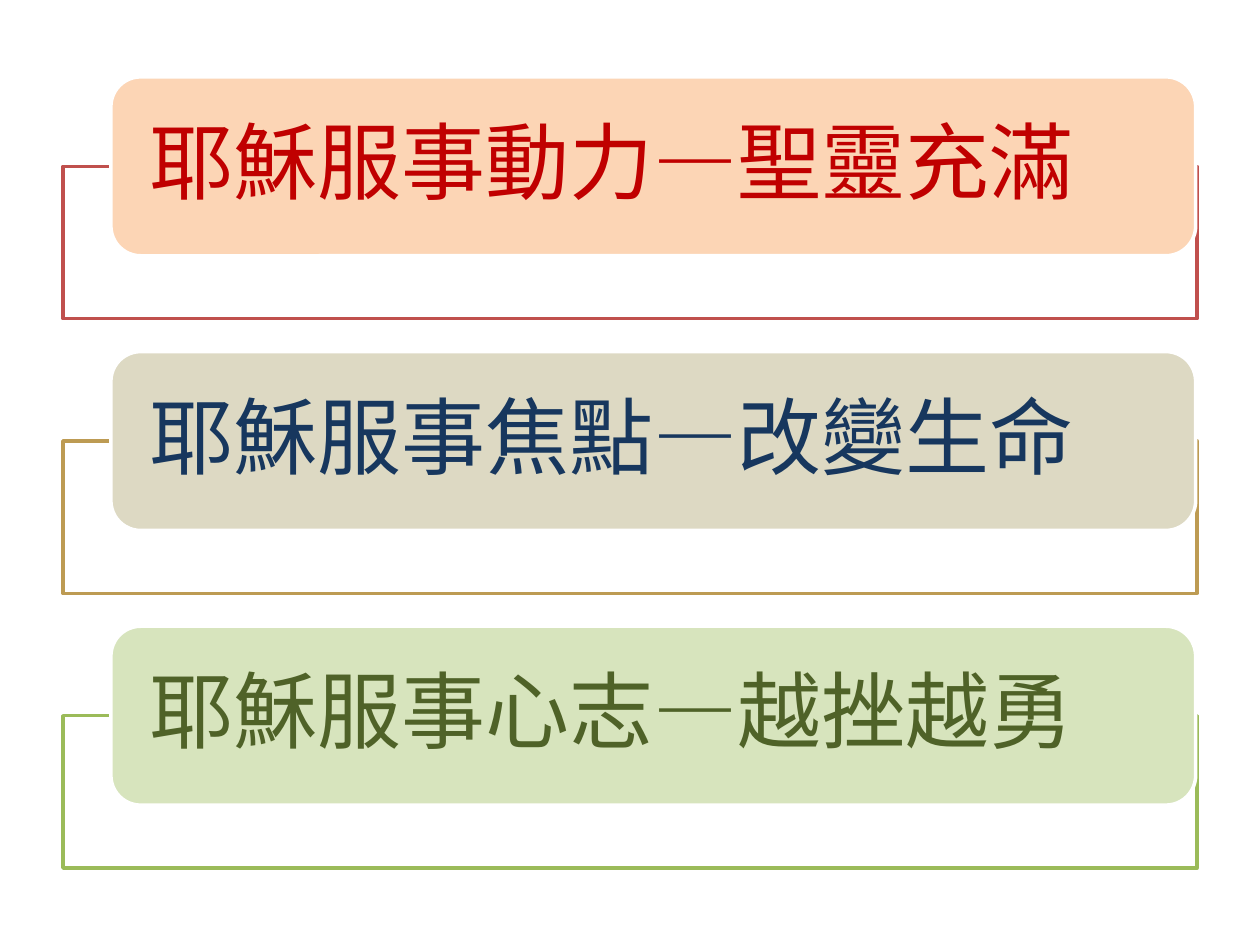
from lxml.etree import SubElement
from pptx import Presentation
from pptx.dml.color import RGBColor
from pptx.enum.shapes import MSO_SHAPE
from pptx.enum.text import MSO_ANCHOR, PP_ALIGN
from pptx.oxml.ns import qn
from pptx.util import Inches, Pt

COLORS = {
    "white": "FFFFFF",
    "red": "C0504D", "peach": "FCD5B5", "dark red": "C00000",
    "gold": "BD9B53", "sand": "DDD9C3", "navy": "17375E",
    "green": "9BBB59", "pale green": "D7E4BD", "dark green": "4F6228",
}

# Heading, frame line, label fill, text colour
POINTS = [
    ("耶穌服事動力—聖靈充滿", "red", "peach", "dark red"),
    ("耶穌服事焦點—改變生命", "gold", "sand", "navy"),
    ("耶穌服事心志—越挫越勇", "green", "pale green", "dark green"),
]

FIRST_TOP = 0.61
ROW_STEP = 2.18
LABEL_HEIGHT = 1.42


def color(name):
    return RGBColor.from_string(COLORS[name])


def add_box(slide, kind, left, top, width, height, fill, line):
    box = slide.shapes.add_shape(
        kind, Inches(left), Inches(top), Inches(width), Inches(height))
    box.shadow.inherit = False
    box.fill.solid()
    box.fill.fore_color.rgb = color(fill)
    box.line.color.rgb = color(line)
    box.line.width = Pt(2)
    return box


def add_frame(slide, top, line):
    frame = add_box(slide, MSO_SHAPE.RECTANGLE, 0.5, top, 9, 1.21, "white", line)
    # Fill opacity of 90 %
    fill_color = frame.fill._xPr.find(qn("a:solidFill"))[0]
    SubElement(fill_color, qn("a:alpha"), val="90000")


def add_label(slide, top, text, fill, text_color):
    label = add_box(slide, MSO_SHAPE.ROUNDED_RECTANGLE,
                    0.88, top, 8.61, LABEL_HEIGHT, fill, "white")
    frame = label.text_frame
    frame.text = text
    frame.word_wrap = True
    frame.vertical_anchor = MSO_ANCHOR.MIDDLE
    frame.margin_left = frame.margin_right = Inches(0.24)
    frame.margin_top = frame.margin_bottom = 0
    para = frame.paragraphs[0]
    para.alignment = PP_ALIGN.LEFT
    para.line_spacing = 0.9
    span = para.runs[0]
    span.font.size = Pt(48)
    span.font.name = "Arial"
    span.font.color.rgb = color(text_color)


def main():
    deck = Presentation()
    deck.slide_width, deck.slide_height = Inches(10), Inches(7.5)
    page = deck.slides.add_slide(deck.slide_layouts[6])

    # Each frame starts at the middle of its label
    for row, (text, line, fill, text_color) in enumerate(POINTS):
        top = FIRST_TOP + row * ROW_STEP
        add_frame(page, top + LABEL_HEIGHT / 2, line)
        add_label(page, top, text, fill, text_color)

    deck.save("out.pptx")


if __name__ == "__main__":
    main()
